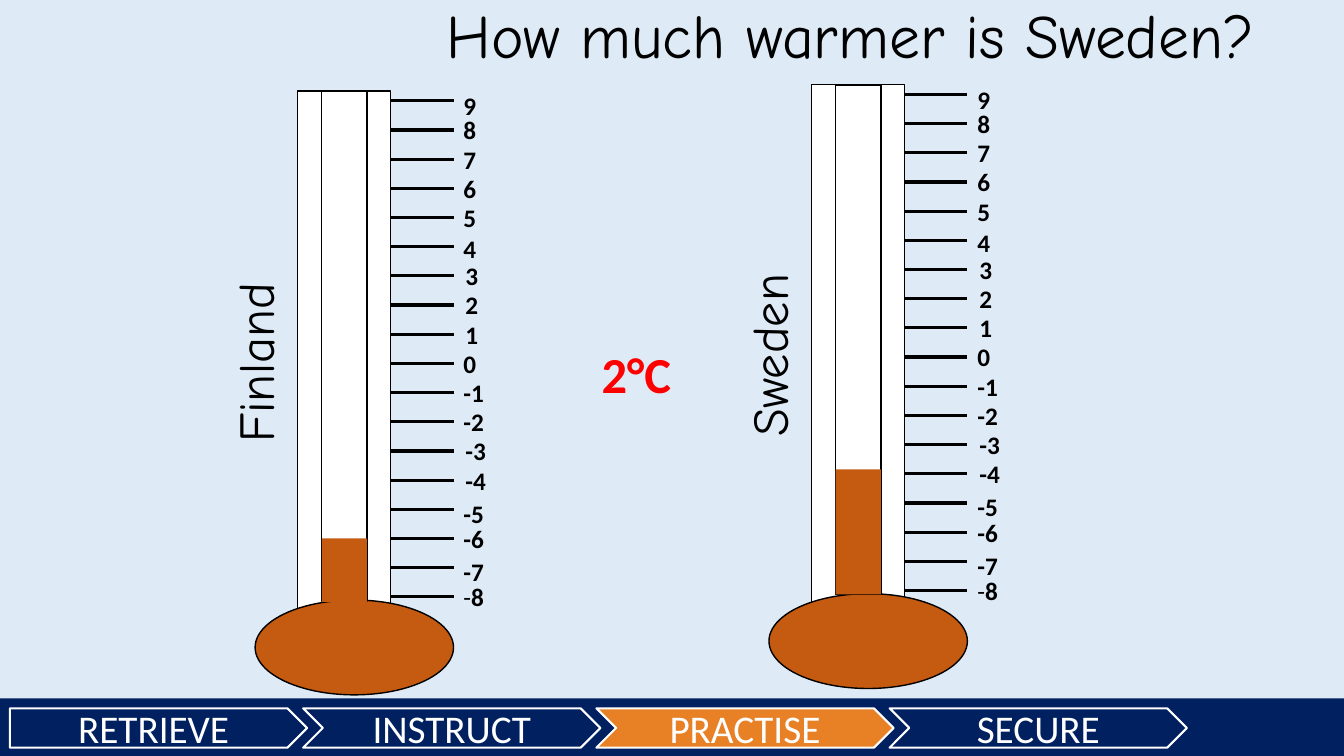
import pptx
import pptx.util
import pptx.dml.color
import pptx.enum.shapes
import pptx.enum.text
import pptx.oxml.ns
from lxml import etree

Cm = pptx.util.Cm
Pt = pptx.util.Pt
KIND = pptx.enum.shapes.MSO_SHAPE
FIT = pptx.enum.text.MSO_AUTO_SIZE
ALIGN = pptx.enum.text.PP_ALIGN
ANCHOR = pptx.enum.text.MSO_ANCHOR

HUES = {
    "sky": "DEEBF7", "navy": "002060", "orange": "E88126", "rust": "C55A11",
    "white": "FFFFFF", "black": "000000", "red": "FF0000",
}
SANS = "Calibri"
COMIC = "Comic Neue"
TOP = 9
LOW = -8
DROPS = {9: 0.13, 4: 0.05, -5: 0.1, -7: 0.1}
INSET = (3, 2, 1, -3, -4)


def hue(name):
    return pptx.dml.color.RGBColor.from_string(HUES[name])


def add_run(para, text, size, font, ink="black", bold=False):
    run = para.add_run()
    run.text = text
    run.font.size = Pt(size)
    run.font.name = font
    run.font.bold = bold
    run.font.color.rgb = hue(ink)


def add_form(shapes, kind, box, fill, edge=None, width=1):
    form = shapes.add_shape(kind, *map(Cm, box))
    form.shadow.inherit = False
    form.fill.solid()
    form.fill.fore_color.rgb = hue(fill)
    if edge:
        form.line.color.rgb = hue(edge)
        form.line.width = Pt(width)
    else:
        form.line.fill.background()
    return form


def add_text(shapes, box):
    label = shapes.add_textbox(*map(Cm, box))
    label.text_frame.word_wrap = True
    label.text_frame.auto_size = FIT.SHAPE_TO_FIT_TEXT
    return label


def add_tick(shapes, left, right, level):
    tick = shapes.add_connector(
        pptx.enum.shapes.MSO_CONNECTOR.STRAIGHT,
        Cm(left), Cm(level), Cm(right), Cm(level))
    tick.line.color.rgb = hue("black")
    tick.line.width = Pt(2.25)
    etree.SubElement(tick._element.spPr, pptx.oxml.ns.qn("a:effectLst"))


def add_scale(shapes, left, top, width, height):
    step = height / (TOP - LOW)
    right = left + width
    for value in range(LOW, TOP + 1):
        level = top + (TOP - value) * step
        add_tick(shapes, left, right, level)
        shift = 0.05 if value in INSET else 0
        drop = DROPS.get(value, 0) - 0.51
        label = add_text(shapes, (right + shift, level + drop, 2.31, 1.02))
        para = label.text_frame.paragraphs[0]
        if value == LOW:
            add_run(para, "-", 18, SANS)
            add_run(para, str(-value), 18, SANS, bold=True)
        else:
            add_run(para, str(value), 18, SANS, bold=True)


def add_gauge(slide, left, top, name, level, depth):
    group = slide.shapes.add_group_shape().shapes
    add_form(group, KIND.RECTANGLE, (left + 1.07, top, 2.34, 13.92),
             "white", "black")
    add_form(group, KIND.OVAL, (left, top + 12.83, 5, 2.39), "rust", "black")
    add_form(group, KIND.RECTANGLE, (left + 1.68, top + 0.01, 1.14, 12.85),
             "white", "black")
    add_scale(group, left + 3.4, top + 0.25, 1.6, 12.5)

    label = add_text(slide.shapes, (left - 2.96, top + 5.25, 5.92, 1.8))
    label.rotation = 270
    add_run(label.text_frame.paragraphs[0], name, 36, COMIC)
    add_form(slide.shapes, KIND.RECTANGLE,
             (left + 1.68, top + level, 1.14, depth), "rust")


def add_steps(slide, left, top, width, height, now):
    add_form(slide.shapes, KIND.RECTANGLE, (left, top, width, height), "navy")
    names = ("RETRIEVE", "INSTRUCT", "PRACTISE", "SECURE")
    for spot, name in enumerate(names):
        kind = KIND.CHEVRON if spot else KIND.PENTAGON
        fill = "orange" if name == now else "navy"
        box = (left + 0.25 + 7.39 * spot, top + 0.25, 7.49, 0.99)
        step = add_form(slide.shapes, kind, box, fill, "white", 1.5)
        step.text_frame.vertical_anchor = ANCHOR.MIDDLE
        para = step.text_frame.paragraphs[0]
        para.alignment = ALIGN.CENTER
        add_run(para, name, 28, SANS, "white")


def add_title(slide, left, top, width, height, text):
    title = slide.shapes.title
    title.left, title.top = Cm(left), Cm(top)
    title.width, title.height = Cm(width), Cm(height)
    frame = title.text_frame
    frame.auto_size = FIT.NONE
    frame.vertical_anchor = ANCHOR.TOP
    para = frame.paragraphs[0]
    para.alignment = ALIGN.LEFT
    para.line_spacing = 0.9
    add_run(para, text, 44, COMIC)


def add_answer(slide, left, top, width, height, text):
    label = add_text(slide.shapes, (left, top, width, height))
    add_run(label.text_frame.paragraphs[0], text, 36, SANS, "red", True)


def main():
    deck = pptx.Presentation()
    deck.slide_width = Cm(33.87)
    deck.slide_height = Cm(19.05)
    slide = deck.slides.add_slide(deck.slide_layouts[5])
    slide.background.fill.solid()
    slide.background.fill.fore_color.rgb = hue("sky")
    add_steps(slide, 0, 17.6, 33.87, 1.45, "PRACTISE")
    add_title(slide, 11, 0, 22.87, 3.18, "How much warmer is Sweden?")
    add_gauge(slide, 6.43, 2.29, "Finland", 11.28, 1.6)
    add_gauge(slide, 19.38, 2.13, "Sweden", 9.7, 3.15)
    add_answer(slide, 14.91, 8.53, 2.31, 1.8, "2°C")
    deck.save("out.pptx")


if __name__ == "__main__":
    main()
